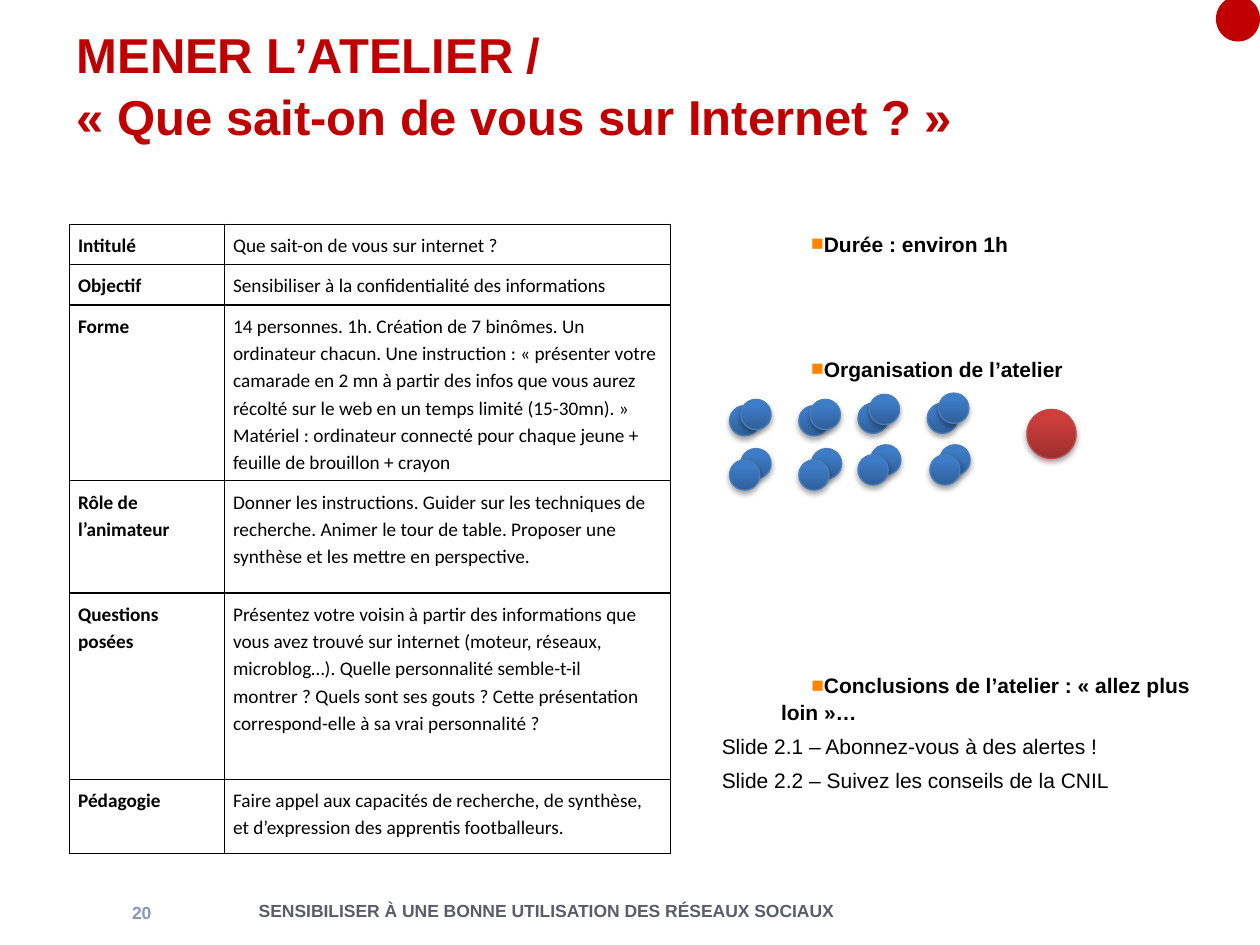
from dataclasses import dataclass

from lxml.etree import SubElement
from pptx import Presentation
from pptx.dml.color import RGBColor
from pptx.enum.shapes import MSO_SHAPE as Shape
from pptx.enum.text import MSO_ANCHOR as Anchor, PP_ALIGN as Align
from pptx.oxml.ns import qn
from pptx.util import Inches, Pt

# The slide is a grid of 100 columns by 100 rows.
COL, ROW = Inches(0.1), Inches(0.075)

RED = RGBColor(0xC0, 0x00, 0x00)
BLACK = RGBColor(0x00, 0x00, 0x00)
GREY = RGBColor(0x58, 0x5D, 0x68)
LILAC = RGBColor(0x8B, 0x96, 0xBC)
ORANGE = RGBColor(0xFF, 0x84, 0x00)
# Bottom, top and outline of a disc
BLUE_DISC = (RGBColor(0x2F, 0x5F, 0x99), RGBColor(0x3D, 0x7C, 0xC7), RGBColor(0x4A, 0x7E, 0xBB))
RED_DISC = (RGBColor(0x9C, 0x2F, 0x2D), RGBColor(0xCB, 0x3E, 0x3A), RGBColor(0xBE, 0x4B, 0x48))

TITLE = ["MENER L’ATELIER /", "« Que sait-on de vous sur Internet ? »"]
FOOTER = "SENSIBILISER À UNE BONNE UTILISATION DES RÉSEAUX SOCIAUX"

# Height in rows, heading, paragraphs
WORKSHOP = [
    (4.27, "Intitulé", ["Que sait-on de vous sur internet ?"]),
    (4.27, "Objectif", ["Sensibiliser à la confidentialité des informations"]),
    (18.6, "Forme", [
        "14 personnes. 1h. Création de 7 binômes. Un ordinateur chacun. Une instruction : "
        "« présenter votre camarade en 2 mn à partir des infos que vous aurez récolté sur le web "
        "en un temps limité (15-30mn). »",
        "Matériel : ordinateur connecté pour chaque jeune + feuille de brouillon + crayon"]),
    (11.87, "Rôle de l’animateur", [
        "Donner les instructions. Guider sur les techniques de recherche. Animer le tour de "
        "table. Proposer une synthèse et les mettre en perspective."]),
    (19.73, "Questions posées", [
        "Présentez votre voisin à partir des informations que vous avez trouvé sur internet "
        "(moteur, réseaux, microblog…). Quelle personnalité semble-t-il montrer ? Quels sont "
        "ses gouts ? Cette présentation correspond-elle à sa vrai personnalité ?"]),
    (7.87, "Pédagogie", [
        "Faire appel aux capacités de recherche, de synthèse, et d’expression des apprentis "
        "footballeurs."]),
]
COLUMN_WIDTHS = (12.3, 35.4)

# Each pair: column and row of the disc behind, then of the disc in front
PAIRS = [
    ((0, 1.33), (0.9, 0.67)), ((0.9, 5.87), (0, 7.07)),
    ((5.5, 1.33), (6.4, 0.67)), ((6.5, 5.87), (5.5, 7.07)),
    ((10.2, 1.07), (11.1, 0.13)), ((11.2, 5.47), (10.2, 6.53)),
    ((15.7, 1.07), (16.6, 0)), ((16.7, 5.47), (15.9, 6.53)),
]


@dataclass
class Box:
    """An area of the slide in columns and rows."""
    col: float
    row: float
    cols: float
    rows: float

    def inner(self, col, row, cols, rows):
        return Box(self.col + col, self.row + row, cols, rows)

    def emu(self):
        return (round(self.col * COL), round(self.row * ROW),
                round(self.cols * COL), round(self.rows * ROW))


def add_frame(page, box, anchor=Anchor.TOP):
    frame = page.shapes.add_textbox(*box.emu()).text_frame
    frame.word_wrap = True
    frame.vertical_anchor = anchor
    return frame


def write(frame, lines, size, color, bold, font="Arial", align=Align.LEFT, spacing=1.0):
    """Write one paragraph per line and return the paragraphs."""
    paras = [frame.paragraphs[0]] + [frame.add_paragraph() for _ in lines[1:]]
    for para, line in zip(paras, lines):
        para.alignment = align
        para.line_spacing = spacing
        span = para.add_run()
        span.text = line
        span.font.name, span.font.size, span.font.bold = font, Pt(size), bold
        span.font.color.rgb = color
    return paras


def add_bullet(para):
    props = para._p.get_or_add_pPr()
    props.set("marL", str(Inches(0.47)))
    props.set("indent", str(Inches(0.24)))
    color = SubElement(props, qn("a:buClr"))
    SubElement(color, qn("a:srgbClr"), val=str(ORANGE))
    SubElement(props, qn("a:buFont"), typeface="Arial")
    SubElement(props, qn("a:buChar"), char="■")


def draw_title(page, box):
    write(add_frame(page, box, Anchor.MIDDLE), TITLE, 28, RED, True, spacing=1.05)


def draw_footer(page, box):
    number = add_frame(page, box.inner(0, 0.4, 8.7, 4.13), Anchor.MIDDLE)
    write(number, ["20"], 10, LILAC, True, align=Align.RIGHT)
    label = add_frame(page, box.inner(10.3, 0, 57.5, 4.53), Anchor.MIDDLE)
    write(label, [FOOTER], 10, GREY, True, align=Align.CENTER)


def draw_corner(page, box):
    dot = page.shapes.add_shape(Shape.OVAL, *box.emu())
    dot.shadow.inherit = False
    dot.fill.solid()
    dot.fill.fore_color.rgb = RED
    dot.line.fill.background()


def add_borders(cell):
    props = cell._tc.get_or_add_tcPr()
    for position, side in enumerate(("lnL", "lnR", "lnT", "lnB")):
        line = props.makeelement(qn("a:" + side), {"w": str(Pt(0.96))})
        props.insert(position, line)
        fill = SubElement(line, qn("a:solidFill"))
        SubElement(fill, qn("a:srgbClr"), val=str(BLACK))


def draw_workshop(page, box):
    table = page.shapes.add_table(len(WORKSHOP), len(COLUMN_WIDTHS), *box.emu()).table
    table.first_row = table.horz_banding = False
    for column, width in zip(table.columns, COLUMN_WIDTHS):
        column.width = round(width * COL)
    for row, (height, heading, lines) in zip(table.rows, WORKSHOP):
        row.height = round(height * ROW)
        for cell, content, bold in zip(row.cells, ([heading], lines), (True, False)):
            cell.margin_left = cell.margin_right = Inches(0.07)
            cell.margin_top = cell.margin_bottom = Inches(0.05)
            cell.fill.background()
            add_borders(cell)
            write(cell.text_frame, content, 11, BLACK, bold, "Calibri", spacing=1.15)


def add_disc(page, box, colors):
    bottom, top, outline = colors
    disc = page.shapes.add_shape(Shape.OVAL, *box.emu())
    disc.fill.gradient()
    disc.fill.gradient_angle = 90
    for stop, color, position in zip(disc.fill.gradient_stops, (bottom, top), (0, 0.8)):
        stop.color.rgb = color
        stop.position = position
    disc.line.color.rgb = outline
    disc.line.width = Pt(0.75)
    disc.shadow.inherit = False
    effects = disc._element.spPr.find(qn("a:effectLst"))
    shadow = SubElement(effects, qn("a:outerShdw"), blurRad=str(Pt(3.1)), dist=str(Pt(1.8)),
                        dir="5400000", rotWithShape="0")
    tint = SubElement(shadow, qn("a:srgbClr"), val=str(BLACK))
    SubElement(tint, qn("a:alpha"), val="35000")


def draw_seating(page, box):
    """Eight pairs of participants, and the workshop leader."""
    for pair in PAIRS:
        for col, row in pair:
            add_disc(page, box.inner(col, row, 2.4, 3.2), BLUE_DISC)
    add_disc(page, box.inner(23.6, 1.73, 3.9, 5.2), RED_DISC)


def draw_plan(page, box):
    lines = ["Durée : environ 1h", "Organisation de l’atelier"]
    paras = write(add_frame(page, box), lines, 12, BLACK, True)
    for para in paras:
        add_bullet(para)
    paras[1].space_before = Pt(57)


def draw_conclusions(page, box):
    lines = ["Conclusions de l’atelier : « allez plus loin »…",
             "Slide 2.1 – Abonnez-vous à des alertes !",
             "Slide 2.2 – Suivez les conseils de la CNIL"]
    heading, *slides = write(add_frame(page, box), lines, 12, BLACK, False, spacing=1.05)
    add_bullet(heading)
    heading.runs[0].font.bold = True
    for para in slides:
        para.space_before = Pt(4.4)


def main():
    deck = Presentation()
    deck.slide_width, deck.slide_height = 100 * COL, 100 * ROW
    page = deck.slides.add_slide(deck.slide_layouts[6])
    draw_title(page, Box(5.1, 4.67, 96.1, 8.4))
    draw_footer(page, Box(4.3, 94.13, 67.8, 4.53))
    draw_seating(page, Box(57.9, 41.6, 27.5, 10.27))
    draw_plan(page, Box(56.3, 23.8, 32.3, 16.5))
    draw_conclusions(page, Box(56.3, 70.4, 40.2, 14))
    draw_workshop(page, Box(5.5, 23.73, 47.7, 66.61))
    draw_corner(page, Box(96.5, -0.4, 3.5, 4.8))
    deck.save("out.pptx")


if __name__ == "__main__":
    main()
